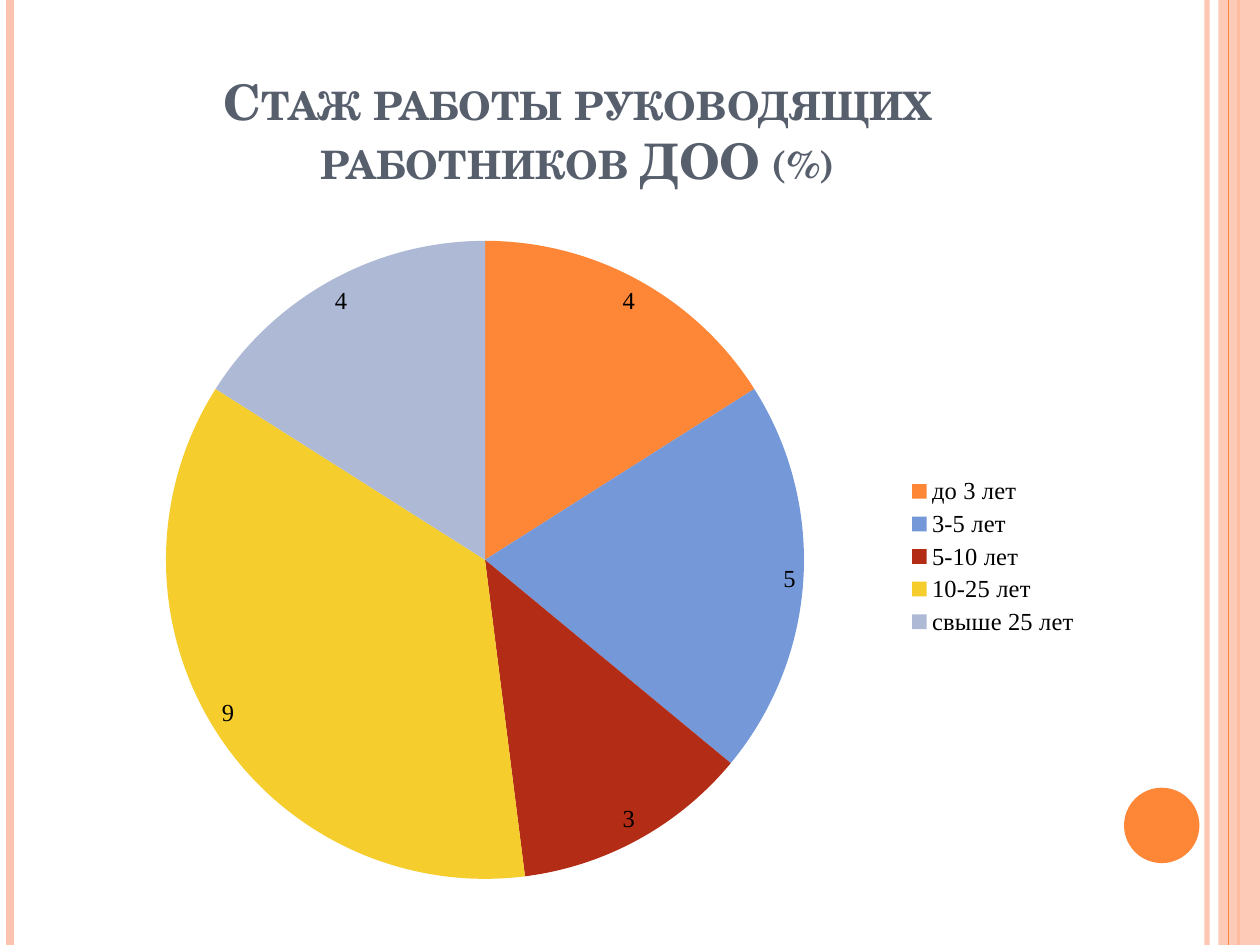
from dataclasses import dataclass
from typing import Optional

import pptx
import pptx.chart.data
import pptx.dml.color
import pptx.enum.chart
import pptx.enum.shapes
import pptx.enum.text
import pptx.oxml
import pptx.oxml.ns
import pptx.util
from lxml import etree

Cm = pptx.util.Cm
Pt = pptx.util.Pt
RGBColor = pptx.dml.color.RGBColor
qn = pptx.oxml.ns.qn

ORANGE = RGBColor(0xFE, 0x86, 0x37)
PEACH = RGBColor(0xFE, 0xC3, 0xAE)
BLUE = RGBColor(0x75, 0x98, 0xD9)
RED = RGBColor(0xB3, 0x2C, 0x16)
YELLOW = RGBColor(0xF5, 0xCD, 0x2D)
LAVENDER = RGBColor(0xAE, 0xBA, 0xD5)
SLATE = RGBColor(0x57, 0x5F, 0x6D)
BLACK = RGBColor(0, 0, 0)

SLIDE_W, SLIDE_H = 25.4, 19.05
LEFT, CONTENT_W = 1.27, 20.75


@dataclass
class Stripe:
    x: float
    color: RGBColor
    width: float
    opacity: Optional[int] = None


@dataclass
class Slice:
    name: str
    value: int
    color: RGBColor


STRIPES_BELOW = [
    Stripe(24.33, PEACH, 3, 93),
    Stripe(0.2, PEACH, 4.5),
    Stripe(24.97, ORANGE, 1.5),
]
STRIPE_ABOVE = Stripe(24.77, ORANGE, 0.75)
SLICES = [
    Slice("до 3 лет", 4, ORANGE),
    Slice("3-5 лет", 5, BLUE),
    Slice("5-10 лет", 3, RED),
    Slice("10-25 лет", 9, YELLOW),
    Slice("свыше 25 лет", 4, LAVENDER),
]


def set_opacity(sp, percent: int) -> None:
    color = next(sp._element.spPr.iter(qn("a:srgbClr")))
    etree.SubElement(color, qn("a:alpha"), val=str(percent * 1000))


def add_stripe(slide, stripe: Stripe) -> None:
    x = Cm(stripe.x)
    line = slide.shapes.add_connector(
        pptx.enum.shapes.MSO_CONNECTOR.STRAIGHT, x, 0, x, Cm(SLIDE_H))
    line.line.color.rgb = stripe.color
    line.line.width = Pt(stripe.width)
    etree.SubElement(line._element.spPr, qn("a:effectLst"))
    if stripe.opacity is not None:
        set_opacity(line, stripe.opacity)


def add_plain_shape(slide, kind, x: float, y: float, w: float, h: float,
                    color: RGBColor):
    sp = slide.shapes.add_shape(kind, Cm(x), Cm(y), Cm(w), Cm(h))
    sp.shadow.inherit = False
    sp.fill.solid()
    sp.fill.fore_color.rgb = color
    sp.line.fill.background()
    return sp


def add_title(slide, text: str) -> None:
    title = slide.shapes.title
    title.left, title.top = Cm(LEFT), Cm(0.76)
    title.width, title.height = Cm(CONTENT_W), Cm(3.18)
    tf = title.text_frame
    tf.text = text
    tf.word_wrap = True
    tf.auto_size = pptx.enum.text.MSO_AUTO_SIZE.NONE
    tf.vertical_anchor = pptx.enum.text.MSO_ANCHOR.BOTTOM
    p = tf.paragraphs[0]
    p.alignment = pptx.enum.text.PP_ALIGN.CENTER
    font = p.runs[0].font
    font.name = "TeX Gyre Schola"
    font.size = Pt(28)
    font.bold = True
    font.color.rgb = SLATE
    font._element.set("cap", "small")


def place_plot(chart, x: float, y: float, w: float, h: float) -> None:
    area = chart._chartSpace.chart.plotArea
    for old in area.findall(qn("c:layout")):
        area.remove(old)
    layout = etree.Element(qn("c:layout"))
    manual = etree.SubElement(layout, qn("c:manualLayout"))
    settings = {"layoutTarget": "inner", "xMode": "edge", "yMode": "edge",
                "x": x, "y": y, "w": w, "h": h}
    for tag, val in settings.items():
        etree.SubElement(manual, qn(f"c:{tag}"), val=str(val))
    area.insert(0, layout)


def add_pie(slide, slices: list[Slice]) -> None:
    data = pptx.chart.data.CategoryChartData()
    data.categories = [s.name for s in slices]
    data.add_series("Series 1", [s.value for s in slices])
    chart = slide.shapes.add_chart(
        pptx.enum.chart.XL_CHART_TYPE.PIE, Cm(LEFT), Cm(4.45),
        Cm(CONTENT_W), Cm(13.54), data).chart
    chart.has_title = False
    chart.font.name = "Times New Roman"
    chart.font.size = Pt(14)
    chart.font.color.rgb = BLACK
    chart.has_legend = True
    chart.legend.position = pptx.enum.chart.XL_LEGEND_POSITION.RIGHT
    chart.legend.include_in_layout = False

    plot = chart.plots[0]
    plot.vary_by_categories = True
    plot.has_data_labels = True
    labels = plot.data_labels
    labels.show_value = True
    labels.show_percentage = False
    labels.position = pptx.enum.chart.XL_LABEL_POSITION.INSIDE_END
    for i, s in enumerate(slices):
        fill = plot.series[0].points[i].format.fill
        fill.solid()
        fill.fore_color.rgb = s.color
    place_plot(chart, 0.1, 0.03, 0.62, 0.95)


def main() -> None:
    prs = pptx.Presentation()
    prs.slide_width, prs.slide_height = Cm(SLIDE_W), Cm(SLIDE_H)
    slide = prs.slides.add_slide(prs.slide_layouts[5])  # title only

    # Edge decoration
    shape_kind = pptx.enum.shapes.MSO_SHAPE
    for stripe in STRIPES_BELOW:
        add_stripe(slide, stripe)
    band = add_plain_shape(slide, shape_kind.RECTANGLE,
                           24.56, 0, 0.84, SLIDE_H, PEACH)
    set_opacity(band, 87)
    add_stripe(slide, STRIPE_ABOVE)
    add_plain_shape(slide, shape_kind.OVAL, 22.66, 15.88, 1.52, 1.52, ORANGE)

    # Title and chart
    add_title(slide, "Стаж работы руководящих работников ДОО (%)")
    add_pie(slide, SLICES)

    prs.save("out.pptx")


if __name__ == "__main__":
    main()
